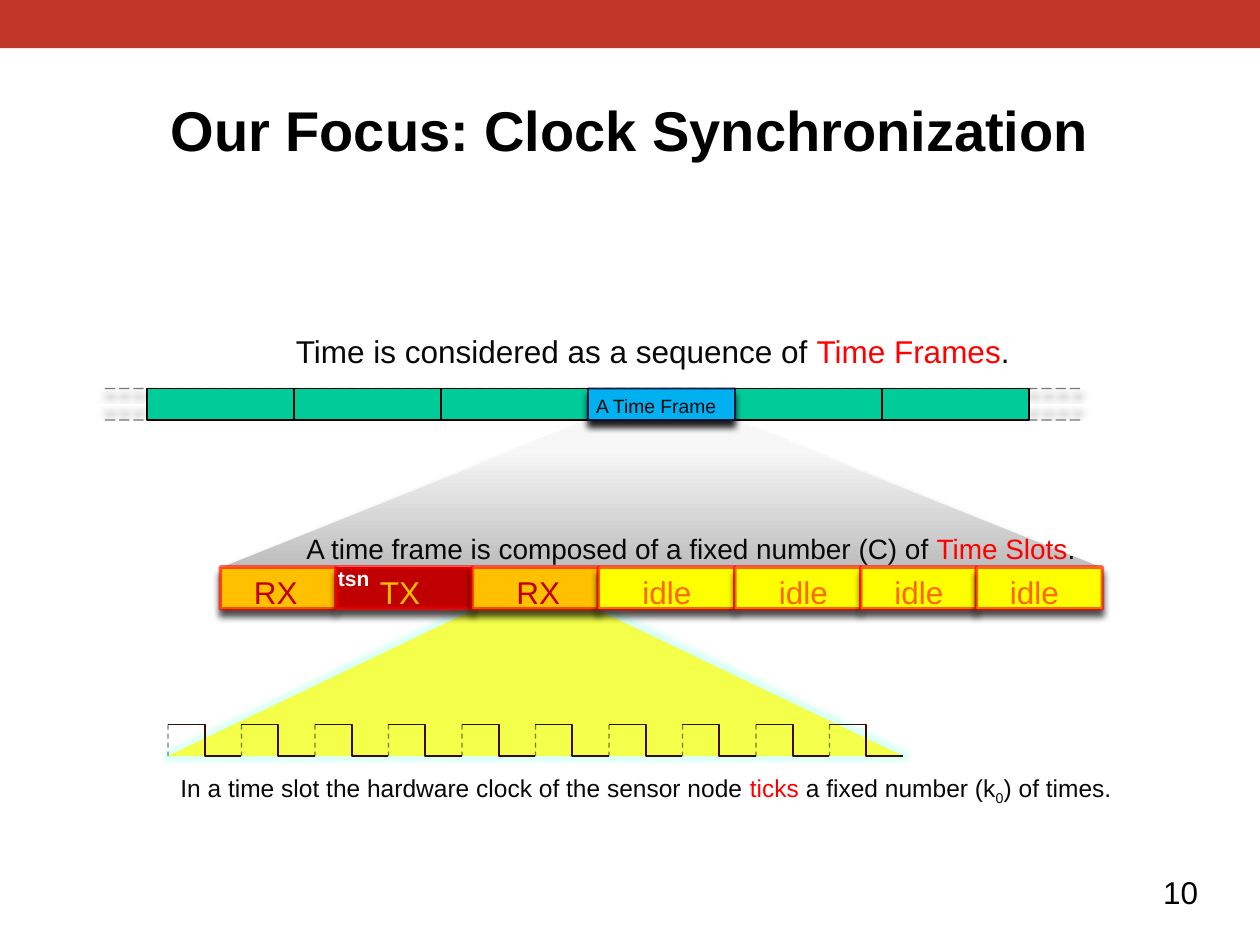
from lxml import etree
from pptx import Presentation
from pptx.dml.color import RGBColor
from pptx.enum.dml import MSO_LINE
from pptx.enum.shapes import MSO_CONNECTOR, MSO_SHAPE
from pptx.enum.text import MSO_ANCHOR, MSO_AUTO_SIZE, PP_ALIGN
from pptx.oxml.ns import qn
from pptx.util import Inches, Pt

RECTANGLE, TRAPEZOID = MSO_SHAPE.RECTANGLE, MSO_SHAPE.TRAPEZOID
STRAIGHT, ELBOW = MSO_CONNECTOR.STRAIGHT, MSO_CONNECTOR.ELBOW
DASH, LONG_DASH = MSO_LINE.DASH, MSO_LINE.LONG_DASH
LEFT, CENTER, RIGHT = PP_ALIGN.LEFT, PP_ALIGN.CENTER, PP_ALIGN.RIGHT
TOP, MIDDLE = MSO_ANCHOR.TOP, MSO_ANCHOR.MIDDLE

COLORS = {
    "banner": "BF3528", "black": "000000", "ink": "080808", "white": "FFFFFF",
    "accent": "FF0000", "frame": "00CC99", "current": "00B0F0",
    "current_edge": "0B0B2E", "rx": "FFC000", "tx": "C00000",
    "idle": "FFFF00", "idle_text": "FF6600", "tick": "360D00",
    "dash": "00140F", "beam_dark": "BEBEBE", "beam_light": "F7F7F7",
    "beam_edge": "F9F9F9", "glow": "00FFCC",
}
LABEL_WIDTHS = {"RX": 6.6, "TX": 6.3, "idle": 7.5}


class Sketch:
    """Draws styled elements on one slide, on a grid of 120 columns by 90 rows."""

    def __init__(self, presentation, font="Arial"):
        self.slide = presentation.slides.add_slide(presentation.slide_layouts[6])
        self.column = presentation.slide_width / 120
        self.row = presentation.slide_height / 90
        self.font = font

    def place(self, left, top, width, height):
        return (round(left * self.column), round(top * self.row),
                round(width * self.column), round(height * self.row))

    def color(self, name):
        return RGBColor.from_string(COLORS[name])

    def opacity(self, color_parent, percent):
        color = next(color_parent.iter(qn("a:srgbClr")))
        etree.SubElement(color, qn("a:alpha"), val=str(percent * 1000))

    def line(self, target, color, width, opacity=100, dash=None):
        target.line.color.rgb = self.color(color)
        target.line.width = Pt(width)
        if dash:
            target.line.dash_style = dash
        self.opacity(target.line._get_or_add_ln(), opacity)

    def effect(self, effects, tag, color, opacity, **attributes):
        effect = etree.SubElement(effects, qn(tag), attributes)
        etree.SubElement(effect, qn("a:srgbClr"), val=COLORS[color])
        self.opacity(effect, opacity)

    def shadow(self, effects, opacity, blur, distance, angle=90):
        self.effect(effects, "a:outerShdw", "black", opacity,
                    blurRad=str(Pt(blur)), dist=str(Pt(distance)),
                    dir=str(angle * 60000), rotWithShape="0")

    def shape(self, kind, box, fill, line=None, shadow=None, slant=None):
        shape = self.slide.shapes.add_shape(kind, *self.place(*box))
        shape.shadow.inherit = False
        if slant:
            shape.adjustments[0] = slant
        if isinstance(fill, tuple):
            shape.fill.gradient()
            shape.fill.gradient_angle = 90
            for stop, (color, position) in zip(shape.fill.gradient_stops, fill):
                stop.color.rgb = self.color(color)
                stop.position = position
        else:
            shape.fill.solid()
            shape.fill.fore_color.rgb = self.color(fill)
        if line:
            self.line(shape, *line)
        else:
            shape.line.fill.background()
        if shadow:
            self.shadow(shape._element.spPr.find(qn("a:effectLst")), *shadow)
        return shape

    def glowing_beam(self, box, fill, slant):
        shape = self.shape(TRAPEZOID, box, fill, slant=slant)
        properties = shape._element.spPr
        self.opacity(properties.find(qn("a:solidFill")), 70)
        self.effect(properties.find(qn("a:effectLst")), "a:glow", "glow", 15,
                    rad=str(Pt(5)))

    def connector(self, kind, start, end, line, shadow=None):
        points = self.place(*start, *end)
        connector = self.slide.shapes.add_connector(kind, *points)
        self.line(connector, *line)
        effects = etree.SubElement(connector._element.spPr, qn("a:effectLst"))
        if shadow:
            self.shadow(effects, *shadow)

    def text(self, box, runs, size, align=LEFT, bold=False, wrap=False, anchor=TOP):
        shape = self.slide.shapes.add_textbox(*self.place(*box))
        frame = shape.text_frame
        frame.word_wrap = wrap
        frame.auto_size = MSO_AUTO_SIZE.SHAPE_TO_FIT_TEXT
        frame.vertical_anchor = anchor
        paragraph = frame.paragraphs[0]
        paragraph.alignment = align
        for words, color, *baseline in runs:
            run = paragraph.add_run()
            run.text = words
            run.font.name = self.font
            run.font.size = Pt(size)
            run.font.bold = bold
            run.font.color.rgb = self.color(color)
            if baseline:
                run.font._element.set("baseline", str(baseline[0] * 1000))


def draw_frames(sketch):
    for top, angle in ((40, 270), (37, 90)):
        sketch.connector(STRAIGHT, (10, top), (103, top),
                         ("dash", 0.75, 55, LONG_DASH), (97, 4, 4, angle))
    for index in (0, 1, 2, 4, 5):
        sketch.shape(RECTANGLE, (14 + 14 * index, 37, 14, 3), "frame", ("black", 0.75))
    sketch.shape(RECTANGLE, (56, 37, 14, 3), "current",
                 ("current_edge", 1, 90), (88, 4, 4))
    sketch.text((55, 37, 15, 3.5), [("A Time Frame", "ink")], 11, CENTER, wrap=True)


def draw_slots(sketch):
    slots = [("RX", "rx", "tx", 11, 2), ("TX", "tx", "rx", 13, 3),
             ("RX", "rx", "tx", 12, 3), ("idle", "idle", "idle_text", 13, 3),
             ("idle", "idle", "idle_text", 12, 3), ("idle", "idle", "idle_text", 11, 2),
             ("idle", "idle", "idle_text", 12, 2)]
    left = 21
    labels = []
    for label, fill, color, width, indent in slots:
        sketch.shape(RECTANGLE, (left, 54, width, 4), fill,
                     ("accent", 2, 60), (71, 4, 4))
        labels.append((left + indent, label, color))
        left += width
    for label_left, label, color in labels:
        sketch.text((label_left, 54, LABEL_WIDTHS[label], 4.8), [(label, color)], 18)
    sketch.text((31, 53.3, 8.8, 3.6), [("tsn", "white")], 12, bold=True, wrap=True)


def draw_ticks(sketch):
    for index in range(10):
        left = 16 + 7 * index
        sketch.connector(ELBOW, (left, 69), (left + 7, 72), ("tick", 1))
        sketch.connector(STRAIGHT, (left, 69), (left, 72), ("dash", 0.75, 55, DASH))


def main():
    presentation = Presentation()
    presentation.slide_width, presentation.slide_height = Inches(10), Inches(7.5)
    sketch = Sketch(presentation)
    sketch.shape(RECTANGLE, (0, 0, 120, 4.6), "banner")
    sketch.text((107.4, 82.6, 7.9, 4.8), [("10", "black")], 18, RIGHT)
    sketch.text((9, 8.4, 102, 7.7), [("Our Focus: Clock Synchronization", "black")],
                32, CENTER, bold=True, wrap=True, anchor=MIDDLE)
    sketch.shape(TRAPEZOID, (21, 40, 84, 14), (("beam_dark", 0), ("beam_light", 0.8)),
                 ("beam_edge", 0.75), (35, 3.1, 1.8), 2.5)
    sketch.glowing_beam((16, 58, 70, 14), "idle", 2.09)
    draw_slots(sketch)
    draw_ticks(sketch)
    draw_frames(sketch)
    sketch.text((27, 31, 70.9, 4.8), [("Time is considered as a sequence of ", "ink"),
                                      ("Time Frames", "accent"), (".", "ink")], 18)
    sketch.text((28, 50, 76.5, 4.4),
                [("A time frame is composed of a fixed number (C) of ", "ink"),
                 ("Time Slots", "accent"), (".", "ink")], 16)
    sketch.text((16, 73, 92.2, 4),
                [("In a time slot the hardware clock of the sensor node ", "ink"),
                 ("ticks", "accent"), (" a fixed number (k", "ink"),
                 ("0", "ink", -25), (") of times.", "ink")], 14)
    presentation.save("out.pptx")


if __name__ == "__main__":
    main()
